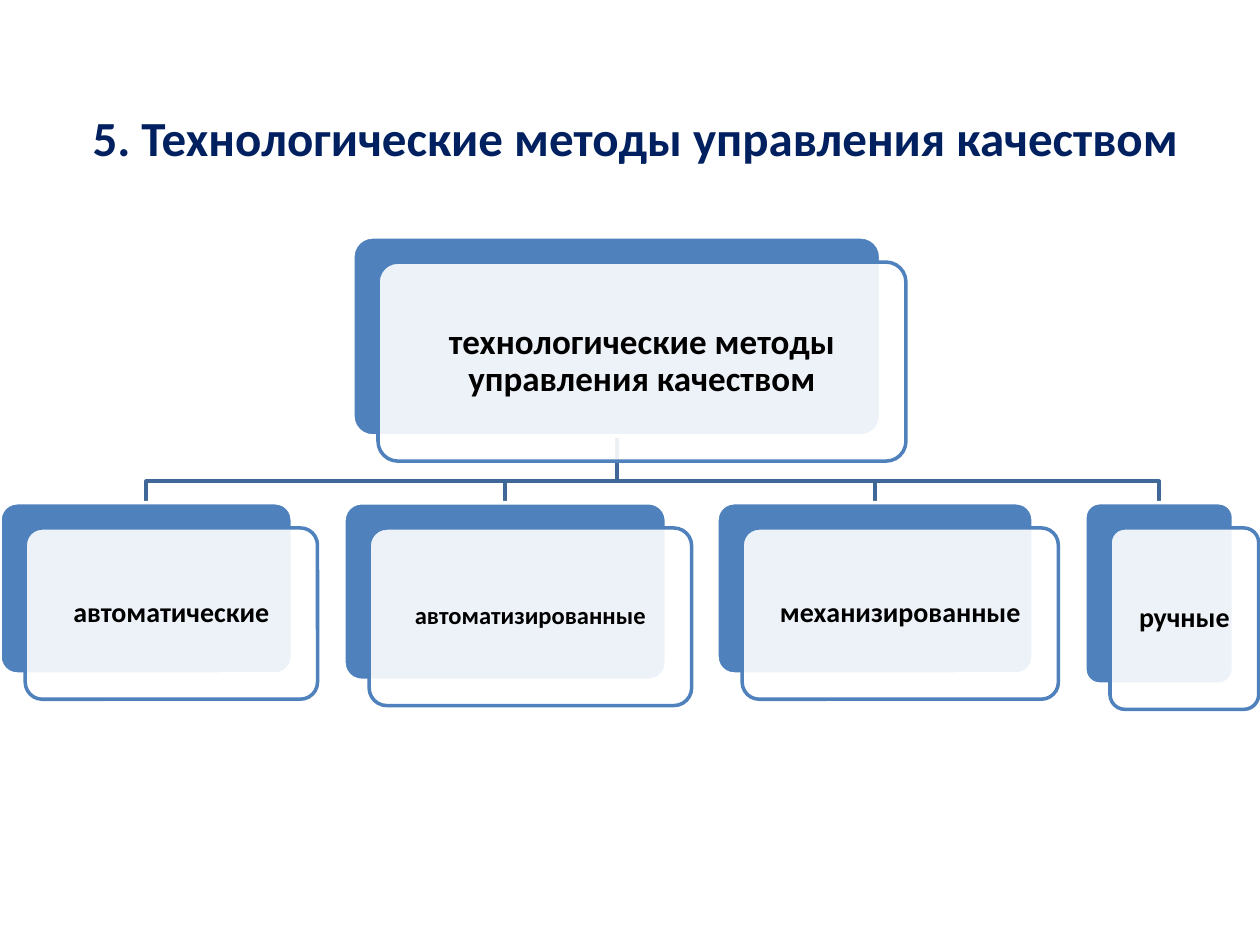
from dataclasses import dataclass

from lxml.etree import SubElement
from pptx import Presentation
from pptx.dml.color import RGBColor
from pptx.enum.shapes import MSO_SHAPE
from pptx.enum.text import MSO_ANCHOR, PP_ALIGN
from pptx.oxml.ns import qn
from pptx.util import Inches, Pt

COLORS = {
    "title": "002060",
    "blue": "4F81BD",
    "link": "3F6797",
    "white": "FFFFFF",
    "text": "000000",
}
FONT = "Calibri"
OFFSET = 0.2  # shift of the front plate against the back plate
BEND_Y = 3.82  # height of the horizontal branch line
CHILD_TOP = 3.99


@dataclass
class Card:
    text: str
    left: float
    top: float
    width: float
    height: float
    size: int
    margin: float = 0.07

    @property
    def center_x(self) -> float:
        return self.left + self.width / 2

    @property
    def bottom(self) -> float:
        return self.top + self.height


def rgb(name: str) -> RGBColor:
    return RGBColor.from_string(COLORS[name])


def set_text(tf, text: str, *, size: int, color: str, margin: float = 0.1,
             spacing: float = 1.0) -> None:
    """Write one bold, centred paragraph into a text frame."""
    tf.word_wrap = True
    tf.vertical_anchor = MSO_ANCHOR.MIDDLE
    tf.margin_left = tf.margin_right = Inches(margin)
    tf.margin_top = tf.margin_bottom = Inches(margin)
    p = tf.paragraphs[0]
    p.alignment = PP_ALIGN.CENTER
    p.line_spacing = spacing
    r = p.add_run()
    r.text = text
    r.font.name = FONT
    r.font.size = Pt(size)
    r.font.bold = True
    r.font.color.rgb = rgb(color)


def add_plate(s, left: float, top: float, width: float, height: float,
              fill: str, line: str):
    sp = s.shapes.add_shape(MSO_SHAPE.ROUNDED_RECTANGLE, Inches(left),
                            Inches(top), Inches(width), Inches(height))
    sp.adjustments[0] = 0.1
    sp.shadow.inherit = False
    sp.fill.solid()
    sp.fill.fore_color.rgb = rgb(fill)
    sp.line.color.rgb = rgb(line)
    sp.line.width = Pt(2)
    return sp


def set_opacity(sp, percent: int) -> None:
    clr = sp._element.spPr.find(qn("a:solidFill")).find(qn("a:srgbClr"))
    SubElement(clr, qn("a:alpha")).set("val", str(percent * 1000))


def add_card(s, card: Card) -> None:
    """Draw a blue back plate and a translucent front plate with the text."""
    add_plate(s, card.left, card.top, card.width, card.height, "blue", "white")
    front = add_plate(s, card.left + OFFSET, card.top + OFFSET, card.width,
                      card.height, "white", "blue")
    set_opacity(front, 90)
    set_text(front.text_frame, card.text, size=card.size, color="text",
             margin=card.margin, spacing=0.9)


def add_branch(s, parent: Card, child: Card) -> None:
    """Draw the bent line from the parent's bottom to the child's top."""
    points = [
        (parent.center_x, parent.bottom),
        (parent.center_x, BEND_Y),
        (child.center_x, BEND_Y),
        (child.center_x, child.top),
    ]
    start, *rest = [(Inches(x), Inches(y)) for x, y in points]
    fb = s.shapes.build_freeform(*start)
    fb.add_line_segments(rest, close=False)
    sp = fb.convert_to_shape()
    sp.shadow.inherit = False
    sp.fill.background()
    sp.line.color.rgb = rgb("link")
    sp.line.width = Pt(2)


ROOT = Card("технологические методы управления качеством",
            2.8, 1.88, 4.19, 1.58, 20, 0.08)
CHILDREN = [
    Card("автоматические", 0, CHILD_TOP, 2.32, 1.36, 16),
    Card("автоматизированные", 2.73, CHILD_TOP, 2.56, 1.41, 14, 0.06),
    Card("механизированные", 5.69, CHILD_TOP, 2.51, 1.36, 16),
    Card("ручные", 8.61, CHILD_TOP, 1.18, 1.44, 16),
]


def main() -> None:
    prs = Presentation()
    prs.slide_width, prs.slide_height = Inches(10), Inches(7.5)
    s = prs.slides.add_slide(prs.slide_layouts[5])

    # Title
    title = s.shapes.title
    title.left, title.top = Inches(0.5), Inches(0.77)
    title.width, title.height = Inches(9.08), Inches(0.64)
    set_text(title.text_frame, "5. Технологические методы управления качеством",
             size=28, color="title")

    # Branch lines lie behind the cards
    for child in reversed(CHILDREN):
        add_branch(s, ROOT, child)

    # Cards
    for card in [ROOT, *CHILDREN]:
        add_card(s, card)

    prs.save("out.pptx")


if __name__ == "__main__":
    main()
